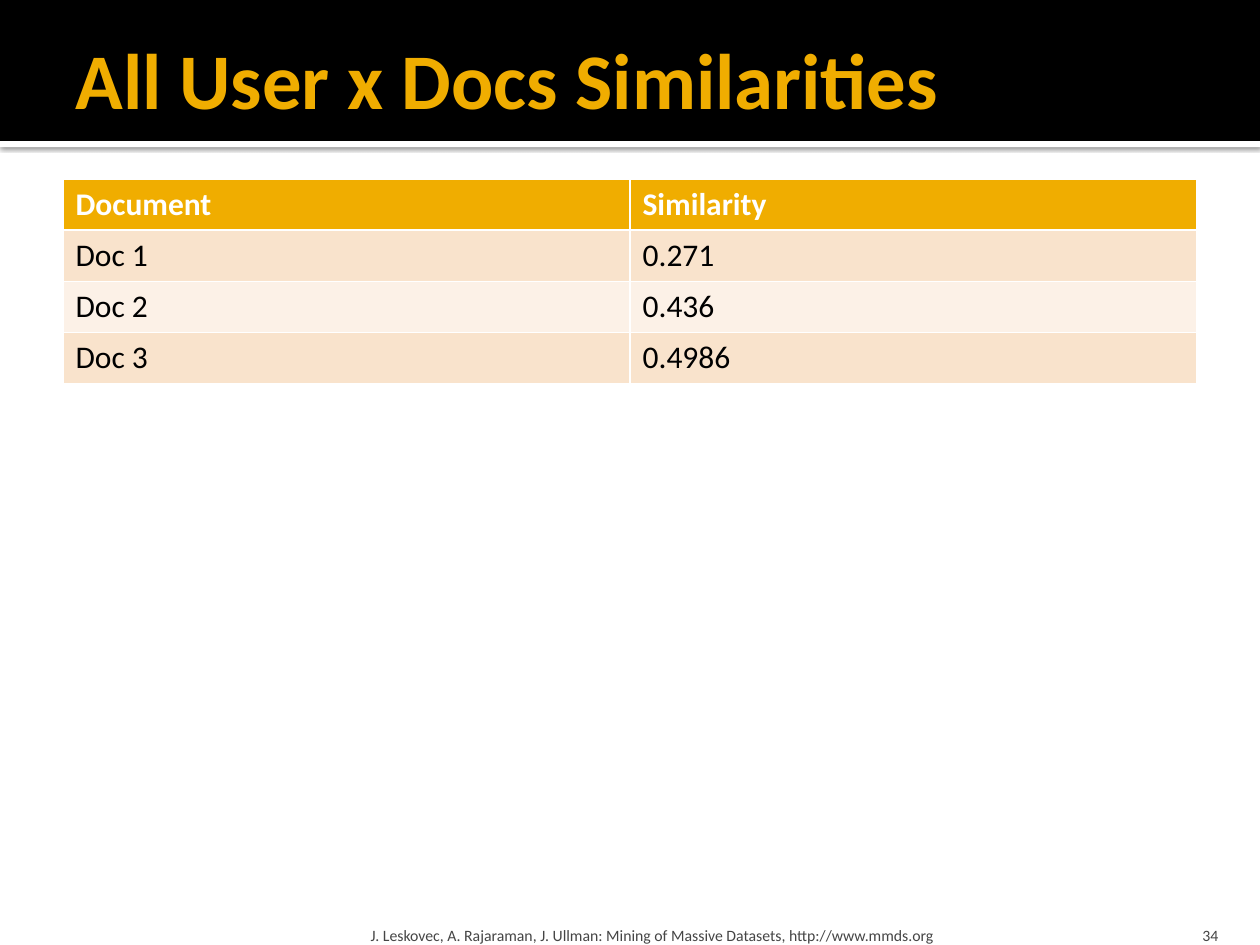
"""Build a slide with a table of document similarities."""
import lxml.etree
import pptx
import pptx.dml.color
import pptx.enum.text
import pptx.oxml
import pptx.oxml.ns
import pptx.util

Cm, Pt = pptx.util.Cm, pptx.util.Pt
Align, Anchor = pptx.enum.text.PP_ALIGN, pptx.enum.text.MSO_ANCHOR

TITLE = "All User x Docs Similarities"
ROWS = [
    ("Document", "Similarity"),
    ("Doc 1", "0.271"),
    ("Doc 2", "0.436"),
    ("Doc 3", "0.4986"),
]
NOTES = [
    ("J. Leskovec, A. Rajaraman, J. Ullman: Mining of Massive Datasets, "
     "http://www.mmds.org", 7.34, 15.29, 0.13, Align.LEFT),
    ("34", 22.78, 2.03, 0.25, Align.RIGHT),
]
COLORS = {"gold": "F0AD00", "black": "000000", "white": "FFFFFF",
          "odd": "F9E3CC", "even": "FCF1E7", "gray": "454545"}
WIDTH, HEIGHT, EDGE = 25.4, 19.05, 1.27
BAND, STRIP, ROW = 2.84, 0.13, 1.03
SHADOW = (
    f'<a:effectLst {pptx.oxml.ns.nsdecls("a")}>'
    '<a:outerShdw blurRad="31750" dist="10160" dir="5400000" algn="t" rotWithShape="0">'
    '<a:srgbClr val="000000"><a:alpha val="60000"/></a:srgbClr>'
    '</a:outerShdw></a:effectLst>'
)


def rgb(name):
    """Return the named colour."""
    return pptx.dml.color.RGBColor.from_string(COLORS[name])


def write(frame, text, size, color, bold=False, align=Align.LEFT):
    """Put one formatted paragraph in a text frame."""
    frame.text = text
    para = frame.paragraphs[0]
    para.alignment = align
    font = para.font
    font.name, font.size, font.bold = "Calibri", Pt(size), bold
    font.color.rgb = rgb(color)


def inset(frame, left, top, right, foot):
    """Set the four margins of a text frame."""
    frame.margin_left, frame.margin_top = Cm(left), Cm(top)
    frame.margin_right, frame.margin_bottom = Cm(right), Cm(foot)


def add_band(slide, top, height, color):
    """Draw a full-width band and return it."""
    band = slide.shapes.add_shape(1, 0, Cm(top), Cm(WIDTH), Cm(height))
    band.shadow.inherit = False
    band.fill.solid()
    band.fill.fore_color.rgb = rgb(color)
    band.line.fill.background()
    return band


def add_head(slide):
    """Draw the bands and set the title on top of them."""
    strip = add_band(slide, BAND, STRIP, "white")
    props = strip._element.spPr
    props.replace(props.find(pptx.oxml.ns.qn("a:effectLst")),
                  pptx.oxml.parse_xml(SHADOW))
    add_band(slide, 0, BAND, "black")
    title = slide.shapes.title
    title.left, title.top = Cm(EDGE), Cm(0.2)
    title.width, title.height = Cm(WIDTH - 2 * EDGE), Cm(2.74)
    frame = title.text_frame
    write(frame, TITLE, 45, "gold", True)
    inset(frame, 0.25, 0.13, 0.13, 0.13)
    frame.vertical_anchor = Anchor.MIDDLE
    frame.auto_size = pptx.enum.text.MSO_AUTO_SIZE.NONE
    slide.shapes._spTree.append(title._element)


def add_grid(slide):
    """Add the similarity table."""
    table = slide.shapes.add_table(
        len(ROWS), len(ROWS[0]), Cm(EDGE), Cm(3.61),
        Cm(WIDTH - 2 * EDGE), Cm(ROW * len(ROWS))).table
    for r, row in enumerate(ROWS):
        head = r == 0
        fill = "gold" if head else "odd" if r % 2 else "even"
        for c, text in enumerate(row):
            cell = table.cell(r, c)
            cell.fill.solid()
            cell.fill.fore_color.rgb = rgb(fill)
            write(cell.text_frame, text, 18, "white" if head else "black", head)


def add_notes(slide):
    """Add the footer texts."""
    for text, left, width, side, align in NOTES:
        box = slide.shapes.add_textbox(Cm(left), Cm(18.29), Cm(width), Cm(0.76))
        frame = box.text_frame
        frame.word_wrap = True
        frame.vertical_anchor = Anchor.BOTTOM
        inset(frame, side, 0.13, side, 0)
        write(frame, text, 9, "gray", align=align)


def main():
    """Build and save the deck."""
    deck = pptx.Presentation()
    deck.slide_width, deck.slide_height = Cm(WIDTH), Cm(HEIGHT)
    slide = deck.slides.add_slide(deck.slide_layouts[5])
    add_head(slide)
    add_grid(slide)
    add_notes(slide)
    deck.save("out.pptx")


if __name__ == "__main__":
    main()
